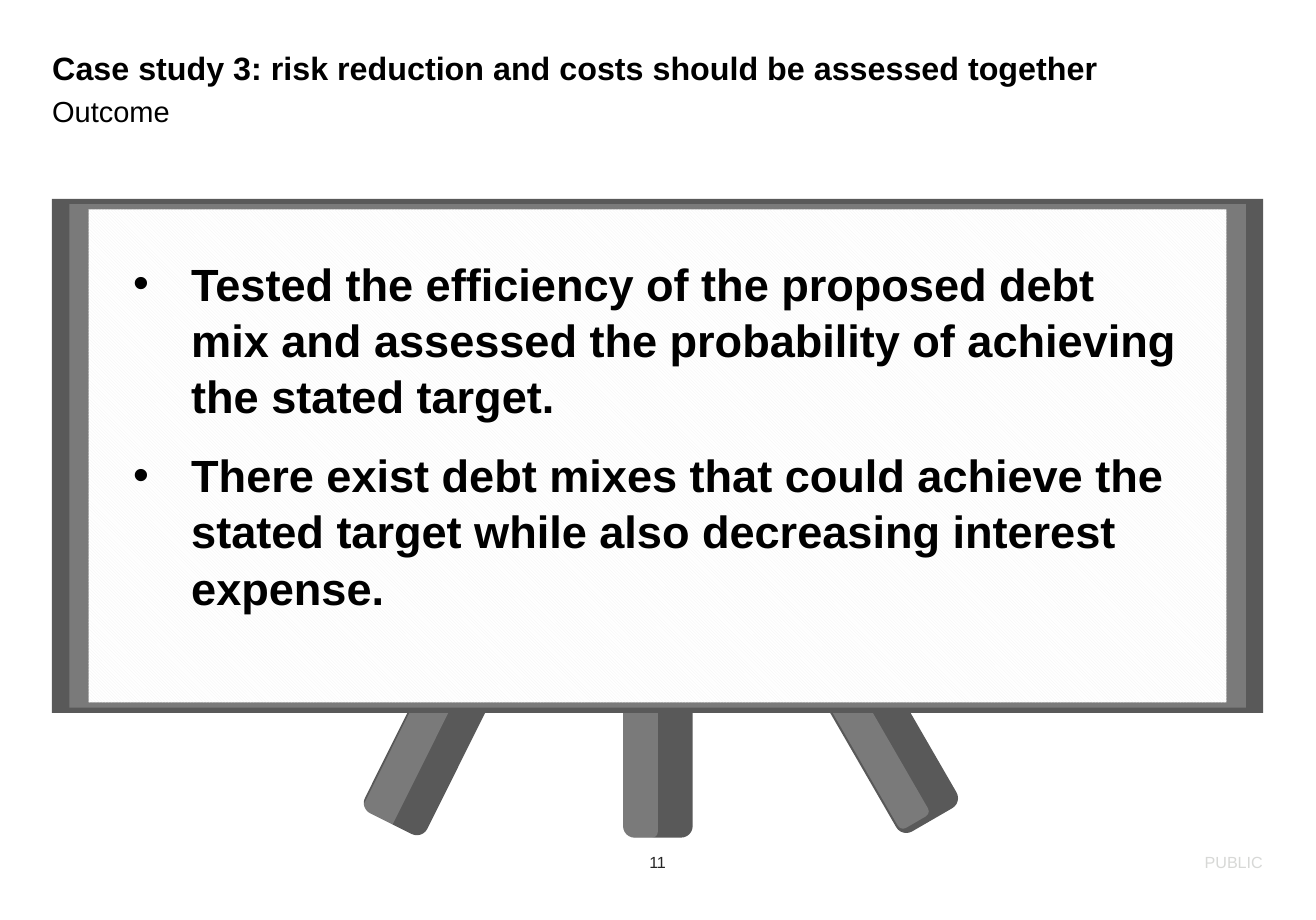
import pptx
import pptx.dml.color
import pptx.enum.dml
import pptx.enum.shapes
import pptx.enum.text
import pptx.oxml
import pptx.oxml.ns
import pptx.util

Pt = pptx.util.Pt
Anchor = pptx.enum.text.MSO_ANCHOR
Align = pptx.enum.text.PP_ALIGN
Shape = pptx.enum.shapes.MSO_SHAPE

LEFT, CONTENT_WIDTH = 32.4, 751
BOARD_CENTER = (408, 283)
LEG_CENTER_Y, LEG_WIDTH, LEG_HEIGHT = 437.4, 43.2, 165
DARK, MIDDLE = "595959", "7A7A7A"
FINDINGS = [
    "Tested the efficiency of the proposed debt mix and assessed the "
    "probability of achieving the stated target.",
    "There exist debt mixes that could achieve the stated target while also "
    "decreasing interest expense.",
]


def color(value):
    """Return the colour for a hex string."""
    return pptx.dml.color.RGBColor.from_string(value)


def place(shape, left, top, width, height):
    """Set the position and size of a shape in points."""
    shape.left, shape.top = Pt(left), Pt(top)
    shape.width, shape.height = Pt(width), Pt(height)


def write_text(shape, paragraphs, size, font_color="000000", bold=False,
               align=Align.LEFT, anchor=Anchor.TOP, inset=(0, 0), spacing=1.0,
               space_before=0, bullet_indent=0):
    """Fill a shape with formatted paragraphs."""
    frame = shape.text_frame
    frame.word_wrap = True
    frame.auto_size = pptx.enum.text.MSO_AUTO_SIZE.NONE
    frame.vertical_anchor = anchor
    frame.margin_left = frame.margin_right = Pt(inset[0])
    frame.margin_top = frame.margin_bottom = Pt(inset[1])
    frame.text = "\n".join(paragraphs)
    for paragraph in frame.paragraphs:
        paragraph.alignment = align
        paragraph.line_spacing = spacing
        paragraph.space_before = Pt(space_before)
        font = paragraph.runs[0].font
        font.name, font.size, font.bold = "Arial", Pt(size), bold
        font.color.rgb = color(font_color)
        if bullet_indent:
            add_bullet(paragraph, bullet_indent)


def add_bullet(paragraph, indent):
    """Give a paragraph a round bullet with a hanging indent."""
    properties = paragraph._p.get_or_add_pPr()
    properties.set("marL", str(Pt(indent)))
    properties.set("indent", str(-Pt(indent)))
    namespace = pptx.oxml.ns.nsdecls("a")
    for markup in (f'<a:buFont {namespace} typeface="Arial"/>',
                   f'<a:buChar {namespace} char="•"/>'):
        properties.append(pptx.oxml.parse_xml(markup))


def add_text(slide, box, paragraphs, size, **text_format):
    """Add a text box with formatted paragraphs."""
    shape = slide.shapes.add_textbox(*map(Pt, box))
    write_text(shape, paragraphs, size, **text_format)


def add_panel(slide, kind, center, width, height, fill, rotation=0, alpha=None):
    """Add a filled shape without outline around a centre point."""
    shape = slide.shapes.add_shape(kind, 0, 0, 0, 0)
    place(shape, center[0] - width / 2, center[1] - height / 2, width, height)
    shape.rotation = rotation
    shape.shadow.inherit = False
    shape.line.fill.background()
    shape.fill.solid()
    shape.fill.fore_color.rgb = color(fill)
    if alpha is not None:
        markup = f'<a:alpha {pptx.oxml.ns.nsdecls("a")} val="{alpha * 1000}"/>'
        shape.fill._xPr.solidFill[0].append(pptx.oxml.parse_xml(markup))
    return shape


def add_leg(slide, center_x, rotation, highlight_shift):
    """Add one leg of the stand with its lighter left half."""
    add_panel(slide, Shape.ROUNDED_RECTANGLE, (center_x, LEG_CENTER_Y),
              LEG_WIDTH, LEG_HEIGHT, DARK, rotation)
    highlight_center = (center_x - LEG_WIDTH / 4 + abs(highlight_shift) / 2,
                        LEG_CENTER_Y + highlight_shift)
    add_panel(slide, Shape.ROUNDED_RECTANGLE, highlight_center,
              LEG_WIDTH / 2, LEG_HEIGHT, "FFFFFF", rotation, alpha=20)


def add_board(slide):
    """Add the nested frames and the hatched surface of the board."""
    for width, height, fill in ((751.5, 319, DARK), (730, 312.5, MIDDLE),
                                (706, 306, "FFFFFF")):
        surface = add_panel(slide, Shape.RECTANGLE, BOARD_CENTER, width, height, fill)
    surface.fill.patterned()
    surface.fill.pattern = pptx.enum.dml.MSO_PATTERN.LIGHT_DOWNWARD_DIAGONAL
    surface.fill.fore_color.rgb = color("F2F2F2")
    surface.fill.back_color.rgb = color("FFFFFF")


def main():
    """Build the slide and save it."""
    presentation = pptx.Presentation()
    presentation.slide_width, presentation.slide_height = Pt(816.5), Pt(571)
    slide = presentation.slides.add_slide(presentation.slide_layouts[5])

    title = slide.shapes.title
    place(title, LEFT, 32.4, CONTENT_WIDTH, 19.5)
    write_text(title, ["Case study 3: risk reduction and costs should be assessed together"],
               20, bold=True, spacing=0.9)
    add_text(slide, (LEFT, 58.3, CONTENT_WIDTH, 21.6), ["Outcome"], 18, space_before=2)

    footer = {"size": 10, "anchor": Anchor.MIDDLE}
    add_text(slide, (398, 528.5, 20, 13.7), ["11"], font_color="252525",
             align=Align.CENTER, **footer)
    add_text(slide, (601.4, 528.5, 182, 13.7), ["PUBLIC"], font_color="D7D8D6",
             align=Align.RIGHT, **footer)

    for center_x, rotation, highlight_shift in ((279.4, 26.5, -1.44),
                                                (537.1, 330, 1.44),
                                                (408.2, 0, 0)):
        add_leg(slide, center_x, rotation, highlight_shift)
    add_board(slide)
    add_text(slide, (75.6, 154, 662.4, 278.6), FINDINGS, 28, bold=True,
             inset=(7.2, 3.6), spacing=1.04, space_before=14, bullet_indent=36)

    presentation.save("out.pptx")


if __name__ == "__main__":
    main()
